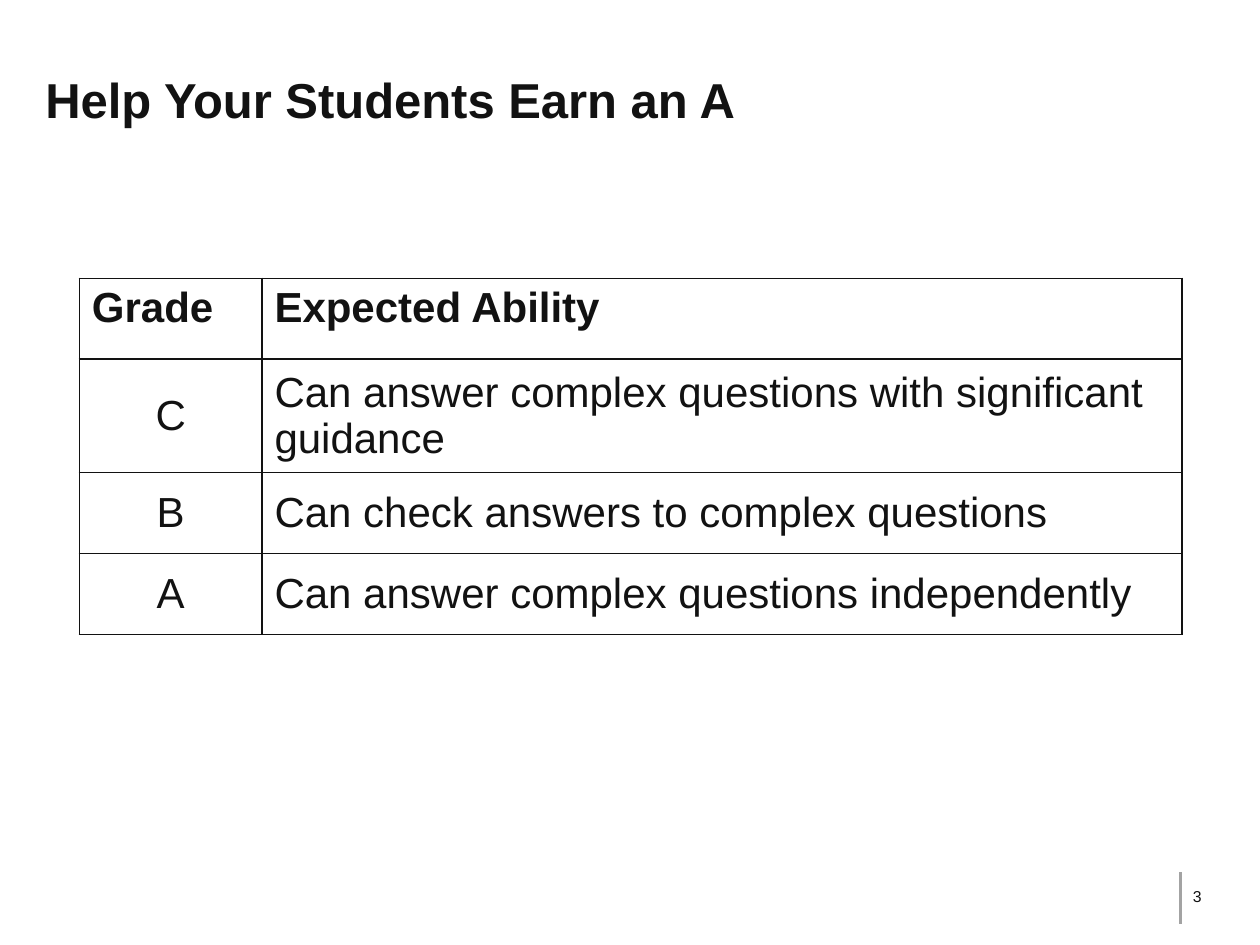
import pptx
import pptx.dml.color
import pptx.enum.shapes
import pptx.enum.text
import pptx.oxml
import pptx.oxml.ns
import pptx.util
from pptx.util import Cm

INK = "121212"
PAPER = "FFFFFF"
RULE = "A3A3A3"
GRADES = [
    ("Grade", "Expected Ability"),
    ("C", "Can answer complex questions with significant guidance"),
    ("B", "Can check answers to complex questions"),
    ("A", "Can answer complex questions independently"),
]
ALIGN = pptx.enum.text.PP_ALIGN
ANCHOR = pptx.enum.text.MSO_ANCHOR


def color(value):
    """Return the RGB colour for a hex string."""
    return pptx.dml.color.RGBColor.from_string(value)


def apply_format(target, values):
    """Set each named attribute of the target."""
    for name, value in values.items():
        setattr(target, name, value)


def write(frame, wording, size, bold=False, align=ALIGN.LEFT):
    """Put one formatted paragraph in a text frame."""
    frame.word_wrap = True
    paragraph = frame.paragraphs[0]
    paragraph.alignment = align
    run = paragraph.add_run()
    run.text = wording
    apply_format(run.font, {"name": "Arial", "size": pptx.util.Pt(size), "bold": bold})
    run.font.color.rgb = color(INK)


def add_borders(cell, width=1):
    """Draw a solid border on all four sides of a cell."""
    properties = cell._tc.get_or_add_tcPr()
    for position, side in enumerate(("lnL", "lnR", "lnT", "lnB")):
        border = pptx.oxml.parse_xml(
            f'<a:{side} {pptx.oxml.ns.nsdecls("a")} w="{pptx.util.Pt(width)}">'
            f'<a:solidFill><a:srgbClr val="{INK}"/></a:solidFill></a:{side}>'
        )
        properties.insert(position, border)


def place_title(slide, left, top, width, height):
    """Move the title placeholder into its box and fill it."""
    title = slide.shapes.title
    apply_format(title, {"left": left, "top": top, "width": width, "height": height})
    title.text_frame.vertical_anchor = ANCHOR.MIDDLE
    write(title.text_frame, "Help Your Students Earn an A", 28, bold=True)


def place_grades(slide, left, top, width, row_height):
    """Build the table of grades and expected abilities."""
    frame = slide.shapes.add_table(len(GRADES), 2, left, top, width, row_height * len(GRADES))
    grades = frame.table
    grade_width = Cm(3.68)
    grades.columns[0].width = grade_width
    grades.columns[1].width = width - grade_width
    for row, wordings in enumerate(GRADES):
        header = row == 0
        for column, wording in enumerate(wordings):
            cell = grades.cell(row, column)
            cell.vertical_anchor = ANCHOR.TOP if header else ANCHOR.MIDDLE
            cell.fill.solid()
            cell.fill.fore_color.rgb = color(PAPER)
            add_borders(cell)
            centred = column == 0 and not header
            write(cell.text_frame, wording, 24, header, ALIGN.CENTER if centred else ALIGN.LEFT)


def place_page_number(slide, left, top, width, height):
    """Place the page number beside its vertical rule."""
    number = slide.shapes.add_textbox(left, top + Cm(0.15), width, Cm(0.69))
    number.text_frame.vertical_anchor = ANCHOR.MIDDLE
    write(number.text_frame, "3", 9)
    rule = slide.shapes.add_connector(
        pptx.enum.shapes.MSO_CONNECTOR.STRAIGHT, left, top, left, top + height
    )
    rule.line.color.rgb = color(RULE)
    rule.line.width = pptx.util.Pt(2)
    rule._element.spPr.append(
        pptx.oxml.parse_xml(f'<a:effectLst {pptx.oxml.ns.nsdecls("a")}/>')
    )


def main():
    """Build and save the slide."""
    deck = pptx.Presentation()
    deck.slide_width, deck.slide_height = Cm(25.4), Cm(19.05)
    slide = deck.slides.add_slide(deck.slide_layouts[5])
    slide.background.fill.solid()
    slide.background.fill.fore_color.rgb = color(PAPER)
    place_page_number(slide, Cm(23.8), Cm(17.58), Cm(1), Cm(1.04))
    place_title(slide, Cm(0.66), Cm(0.86), Cm(24.1), Cm(2.26))
    place_grades(slide, Cm(1.6), Cm(5.61), Cm(22.23), Cm(1.63))
    deck.save("out.pptx")


if __name__ == "__main__":
    main()
